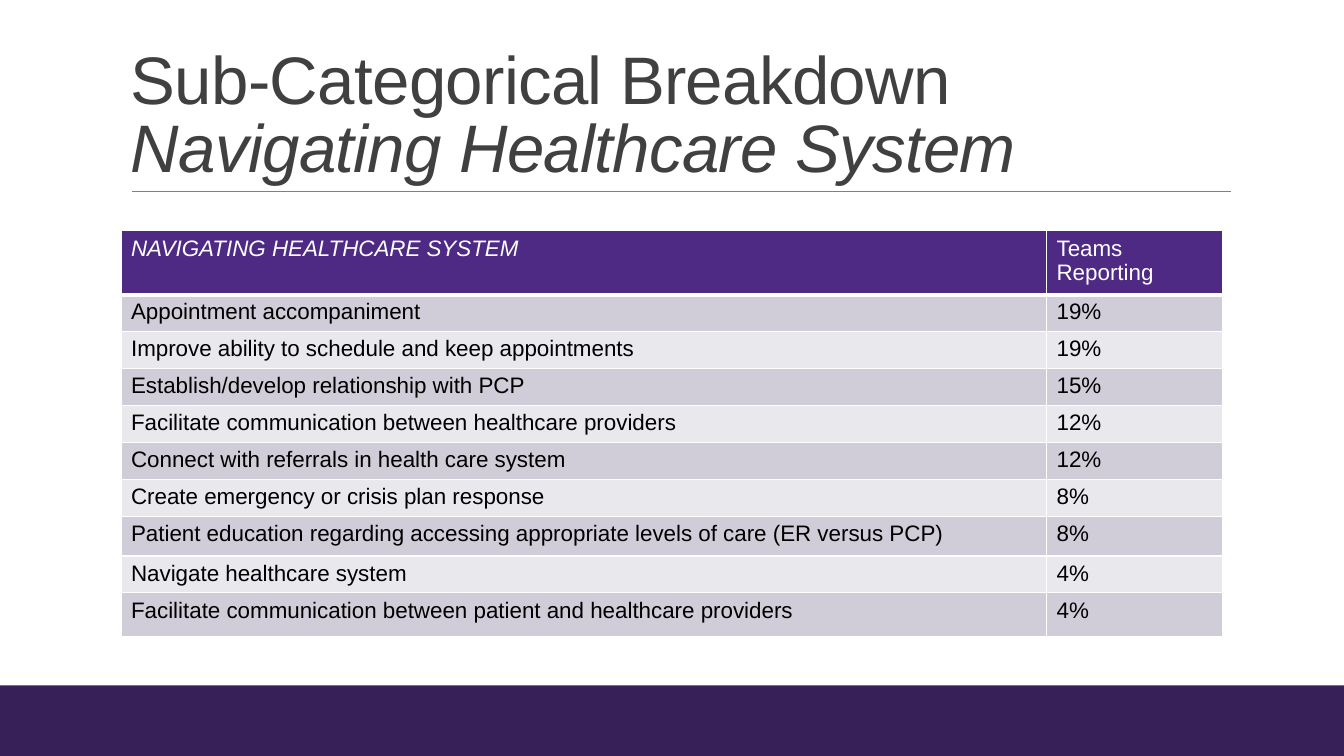
"""Build the Navigating Healthcare System breakdown slide."""
from dataclasses import dataclass

from lxml.etree import SubElement
from pptx import Presentation
from pptx.dml.color import RGBColor as RGB
from pptx.enum.shapes import MSO_CONNECTOR as Connector, MSO_SHAPE as Shape
from pptx.enum.text import MSO_ANCHOR as Anchor
from pptx.oxml import parse_xml
from pptx.oxml.ns import nsdecls, qn
from pptx.slide import Slide
from pptx.table import _Cell as Cell
from pptx.text.text import _Run as Run
from pptx.util import Inches, Pt


@dataclass(frozen=True)
class Theme:
    """Colours and type sizes of the slide."""
    font: str = "Arial"
    title_size: int = 48
    table_size: int = 16
    title: str = "404040"
    rule: str = "808080"
    footer: str = "372058"
    header: str = "4E2A84"
    bands: tuple[str, str] = ("D0CDD9", "E9E8ED")
    white: str = "FFFFFF"
    black: str = "000000"


@dataclass(frozen=True)
class Row:
    """One table row."""
    label: str
    share: str
    height: float = 0.29


THEME = Theme()
COLUMN_WIDTHS = (9.18, 1.75)
ROWS = (
    Row("NAVIGATING HEALTHCARE SYSTEM", "Teams Reporting", 0.62),
    Row("Appointment accompaniment", "19%"),
    Row("Improve ability to schedule and keep appointments", "19%"),
    Row("Establish/develop relationship with PCP", "15%"),
    Row("Facilitate communication between healthcare providers", "12%"),
    Row("Connect with referrals in health care system", "12%"),
    Row("Create emergency or crisis plan response", "8%"),
    Row("Patient education regarding accessing appropriate levels of care (ER versus PCP)", "8%", 0.39),
    Row("Navigate healthcare system", "4%", 0.35),
    Row("Facilitate communication between patient and healthcare providers", "4%", 0.43),
)


def style_run(r: Run, size: int, color: str, italic: bool) -> None:
    """Set the font of a run."""
    r.font.name = THEME.font
    r.font.size = Pt(size)
    r.font.italic = italic
    r.font.color.rgb = RGB.from_string(color)


def add_footer(s: Slide) -> None:
    """Draw the band along the bottom edge."""
    sp = s.shapes.add_shape(Shape.RECTANGLE, 0, Inches(6.8), Inches(13.33), Inches(0.7))
    sp.shadow.inherit = False
    sp.fill.solid()
    sp.fill.fore_color.rgb = RGB.from_string(THEME.footer)
    sp.line.fill.background()


def add_rule(s: Slide) -> None:
    """Draw the line under the title."""
    y = Inches(1.9)
    sp = s.shapes.add_connector(Connector.STRAIGHT, Inches(1.31), y, Inches(12.21), y)
    sp.line.color.rgb = RGB.from_string(THEME.rule)
    sp.line.width = Pt(0.5)
    SubElement(sp._element.spPr, qn("a:effectLst"))


def add_title(s: Slide) -> None:
    """Write the two-line title."""
    sp = s.shapes.add_textbox(Inches(1.2), Inches(0.31), Inches(11), Inches(1.59))
    tf = sp.text_frame
    tf.word_wrap = True
    tf.vertical_anchor = Anchor.BOTTOM
    p = tf.paragraphs[0]
    p.line_spacing = 0.85
    for text, italic in (("Sub-Categorical Breakdown ", False), ("Navigating Healthcare System", True)):
        r = p.add_run()
        r.text = text
        style_run(r, THEME.title_size, THEME.title, italic)
        r.font._element.set("spc", "-50")


def set_borders(cell: Cell, bottom: float) -> None:
    """Give a cell white borders with the given bottom width."""
    tcPr = cell._tc.get_or_add_tcPr()
    for i, (side, width) in enumerate((("L", 1), ("R", 1), ("T", 1), ("B", bottom))):
        tcPr.insert(i, parse_xml(
            f'<a:ln{side} {nsdecls("a")} w="{Pt(width)}"><a:solidFill>'
            f'<a:srgbClr val="{THEME.white}"/></a:solidFill></a:ln{side}>'))


def fill_cell(cell: Cell, text: str, row: int, column: int) -> None:
    """Write and style one table cell."""
    is_header = row == 0
    cell.text_frame.text = text
    style_run(cell.text_frame.paragraphs[0].runs[0], THEME.table_size,
              THEME.white if is_header else THEME.black, is_header and column == 0)
    cell.fill.solid()
    color = THEME.header if is_header else THEME.bands[(row - 1) % 2]
    cell.fill.fore_color.rgb = RGB.from_string(color)
    set_borders(cell, 3 if is_header else 1)


def add_breakdown(s: Slide) -> None:
    """Draw the table of teams reporting."""
    height = Inches(4.02)
    frame = s.shapes.add_table(len(ROWS), len(COLUMN_WIDTHS), Inches(1.2), Inches(2.29),
                               Inches(sum(COLUMN_WIDTHS)), height)
    table = frame.table
    for column, width in zip(table.columns, COLUMN_WIDTHS):
        column.width = Inches(width)
    for i, row in enumerate(ROWS):
        table.rows[i].height = Inches(row.height)
        for j, text in enumerate((row.label, row.share)):
            fill_cell(table.cell(i, j), text, i, j)
    frame.height = height


def main() -> None:
    """Build and save the slide."""
    prs = Presentation()
    prs.slide_width, prs.slide_height = Inches(13.33), Inches(7.5)
    s = prs.slides.add_slide(prs.slide_layouts[6])
    add_footer(s)
    add_rule(s)
    add_title(s)
    add_breakdown(s)
    prs.save("out.pptx")


if __name__ == "__main__":
    main()
